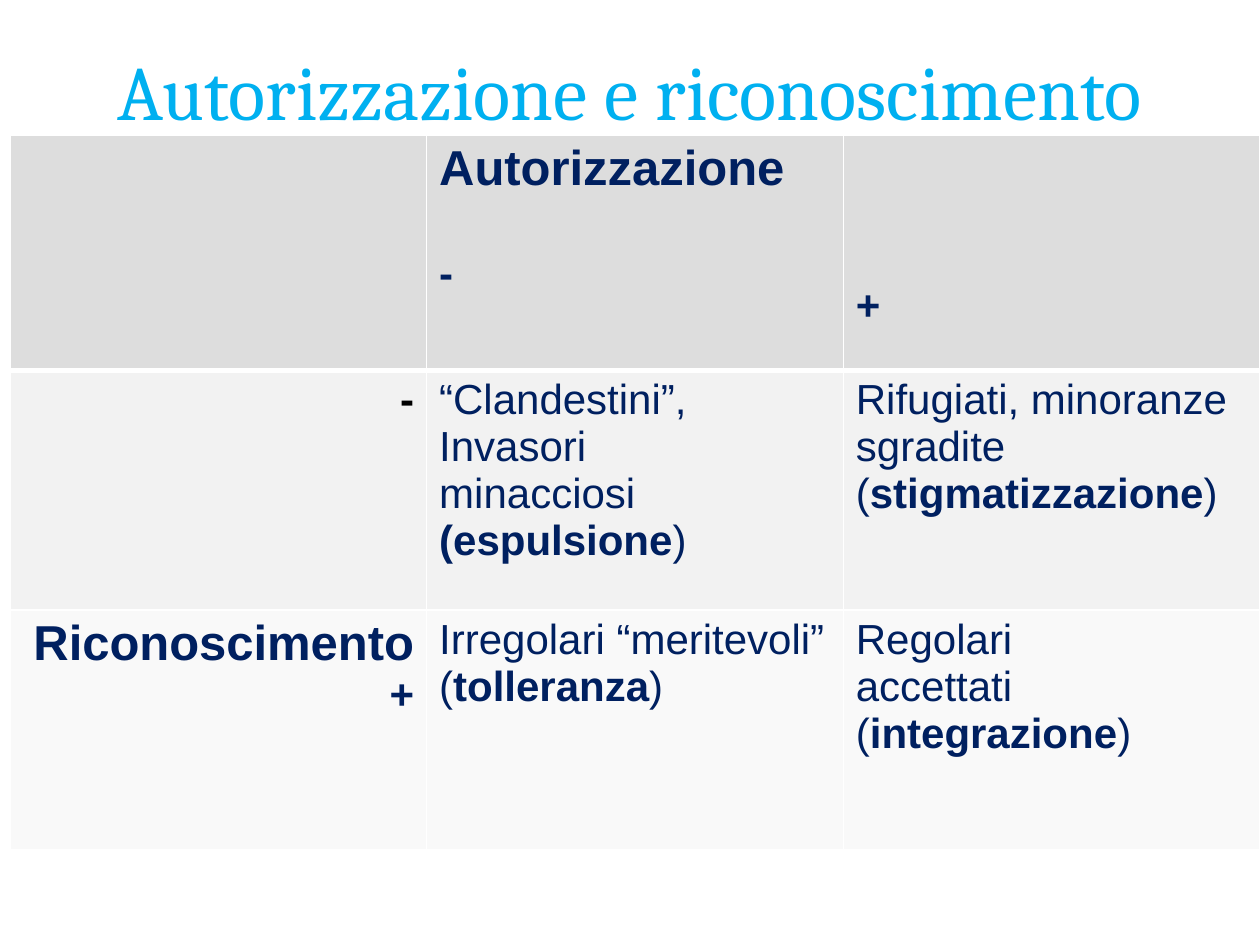
from dataclasses import dataclass

from lxml.etree import SubElement
from pptx import Presentation
from pptx.dml.color import RGBColor as Rgb
from pptx.enum.text import MSO_ANCHOR as Anchor, PP_ALIGN as Align
from pptx.oxml.ns import qn
from pptx.util import Cm, Pt


@dataclass(frozen=True)
class Theme:
    title_font: str = "Cambria"
    body_font: str = "Arial"
    title_color: str = "00B0F0"
    text_color: str = "002060"
    sign_color: str = "000000"
    border_color: str = "FFFFFF"
    row_fills: tuple = ("DDDDDD", "F2F2F2", "F9F9F9")
    title_size: float = 44
    heading_size: float = 28
    body_size: float = 24


THEME = Theme()
HEADING = {"size": THEME.heading_size, "bold": True}
BOLD = {"bold": True}

# Each cell is a list of paragraphs; each paragraph is a list of (text, format) spans.
ROWS = [
    [
        [],
        [[("Autorizzazione", HEADING)], [("-", BOLD)]],
        [[("+", BOLD)]],
    ],
    [
        [[("-", {"bold": True, "color": THEME.sign_color})]],
        [
            [("“Clandestini”, Invasori", {})],
            [("minacciosi", {})],
            [("(espulsione", BOLD), (")", {})],
        ],
        [
            [("Rifugiati, minoranze sgradite", {})],
            [("(", {}), ("stigmatizzazione", BOLD), (")", {})],
        ],
    ],
    [
        [[("Riconoscimento", HEADING)], [("+", BOLD)]],
        [
            [("Irregolari “meritevoli”", {})],
            [("(", {}), ("tolleranza", BOLD), (")", {})],
        ],
        [
            [("Regolari", {})],
            [("accettati", {})],
            [("(", {}), ("integrazione", BOLD), (")", {})],
        ],
    ],
]


def add_span(para, text, style):
    values = {"name": THEME.body_font, "size": THEME.body_size, "bold": False,
              "color": THEME.text_color} | style
    span = para.add_run()
    span.text = text
    span.font.color.rgb = Rgb.from_string(values.pop("color"))
    values["size"] = Pt(values["size"])
    for name, value in values.items():
        setattr(span.font, name, value)


def fill_text(frame, paragraphs, align):
    for index, spans in enumerate(paragraphs):
        para = frame.add_paragraph() if index else frame.paragraphs[0]
        para.alignment = align
        for text, style in spans:
            add_span(para, text, style)


def set_borders(cell, bottom_width):
    """Draw the four cell borders; call it before the cell gets its fill."""
    properties = cell._tc.get_or_add_tcPr()
    for side, width in {"L": 1, "R": 1, "T": 1, "B": bottom_width}.items():
        line = SubElement(properties, qn(f"a:ln{side}"), w=str(Pt(width)))
        fill = SubElement(line, qn("a:solidFill"))
        SubElement(fill, qn("a:srgbClr"), val=THEME.border_color)


def add_title(page, text):
    box = page.shapes.add_textbox(Cm(1.27), Cm(0.76), Cm(22.86), Cm(3.18))
    frame = box.text_frame
    frame.word_wrap = True
    frame.vertical_anchor = Anchor.TOP
    style = {"name": THEME.title_font, "size": THEME.title_size,
             "color": THEME.title_color}
    fill_text(frame, [[(text, style)]], Align.CENTER)


def add_matrix(page):
    widths = [Cm(8.4)] * 3
    heights = [Cm(4.75), Cm(4.83), Cm(4.83)]
    table = page.shapes.add_table(3, 3, Cm(0.2), Cm(2.72),
                                  sum(widths), sum(heights)).table
    table.first_row = table.horz_banding = False
    for column, width in zip(table.columns, widths):
        column.width = width
    for r, (row, height) in enumerate(zip(ROWS, heights)):
        table.rows[r].height = height
        for c, paragraphs in enumerate(row):
            cell = table.cell(r, c)
            set_borders(cell, bottom_width=1 if r else 3)
            cell.fill.solid()
            cell.fill.fore_color.rgb = Rgb.from_string(THEME.row_fills[r])
            fill_text(cell.text_frame, paragraphs, Align.LEFT if c else Align.RIGHT)
    # Lower the two column signs within the header row.
    table.cell(0, 1).text_frame.paragraphs[1].space_before = Pt(31)
    table.cell(0, 2).margin_top = Cm(2.97)


def main():
    deck = Presentation()
    deck.slide_width, deck.slide_height = Cm(25.4), Cm(19.05)
    page = deck.slides.add_slide(deck.slide_layouts[6])
    add_title(page, "Autorizzazione e riconoscimento")
    add_matrix(page)
    deck.save("out.pptx")


if __name__ == "__main__":
    main()
